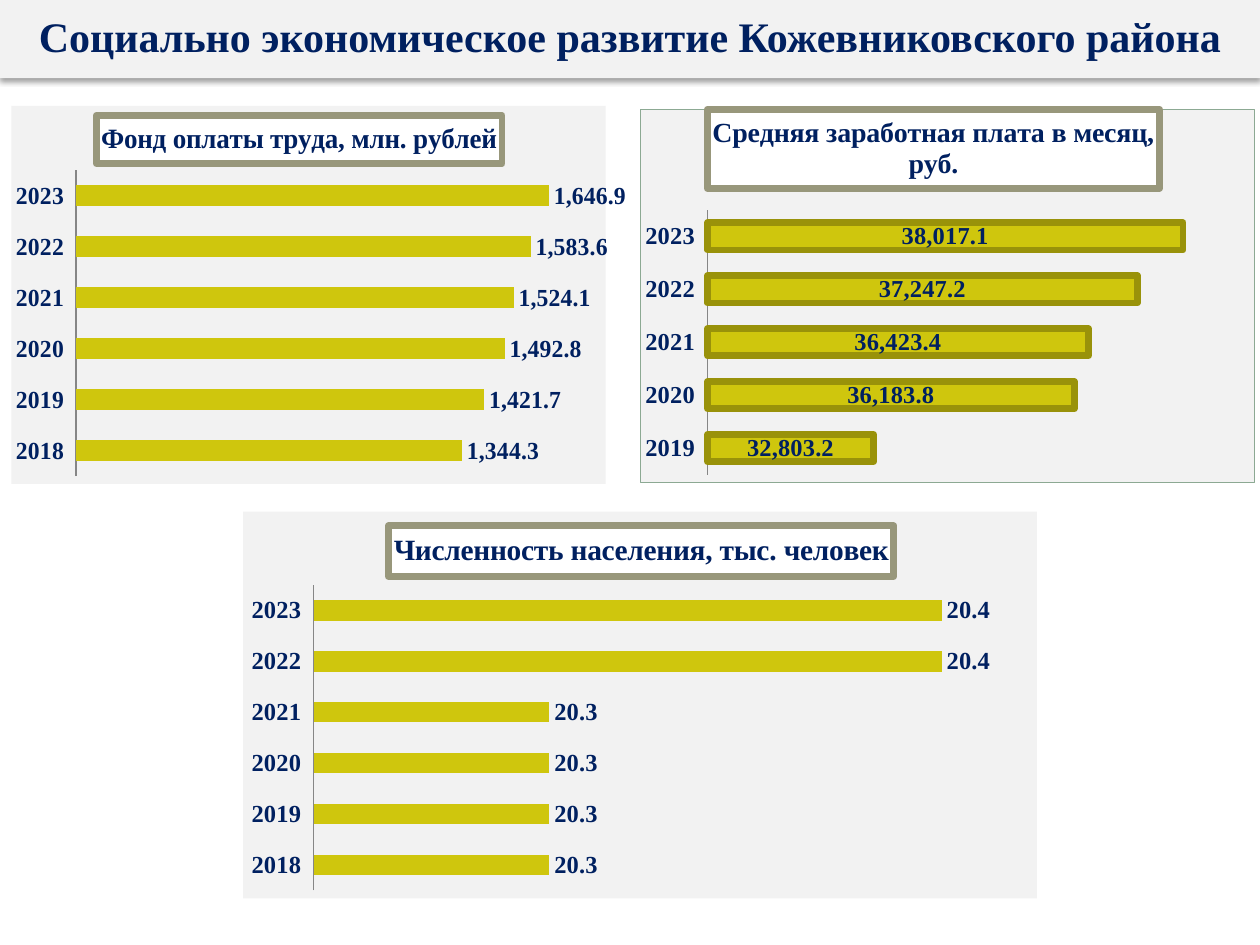
from lxml.etree import SubElement
from pptx import Presentation
from pptx.chart.data import CategoryChartData
from pptx.dml.color import RGBColor
from pptx.enum.chart import XL_CHART_TYPE as ChartType
from pptx.enum.chart import XL_LABEL_POSITION as LabelPos
from pptx.enum.chart import XL_TICK_LABEL_POSITION as TickLabelPos
from pptx.enum.chart import XL_TICK_MARK as TickMark
from pptx.enum.text import MSO_ANCHOR, PP_ALIGN
from pptx.oxml import parse_xml
from pptx.oxml.ns import nsdecls, qn
from pptx.util import Inches, Pt

NAVY, PANEL, OLIVE = "002060", "F2F2F2", "CFC60D"

PANELS = [
    {
        "box": (5.08, 0.84, 4.88, 2.99),
        "heading": "Средняя заработная плата в месяц, руб.",
        "heading_size": 16,
        "heading_at": (0.109, 0),
        "plot_at": (0.109, 0.27, 0.87, 0.71),
        "first_year": 2019,
        "amounts": [32803.2, 36183.8, 36423.4, 37247.2, 38017.1],
        "scale": (30000, 39000),
        "kind": ChartType.BAR_STACKED,
        "label_position": LabelPos.CENTER,
        "gap": 95,
        "border": ("8CA993", 0.5),
        "bar_line": ("99920A", 3.78),
    },
    {
        "box": (1.93, 4.06, 6.3, 3.07),
        "heading": "Численность населения, тыс. человек",
        "heading_size": 16.8,
        "heading_at": (0.183, 0.037),
        "plot_at": (0.089, 0.19, 0.89, 0.79),
        "first_year": 2018,
        "amounts": [20.3, 20.3, 20.3, 20.3, 20.4, 20.4],
        "scale": (20.24, 20.42),
    },
    {
        "box": (0.09, 0.84, 4.88, 3),
        "heading": "Фонд оплаты труда, млн. рублей",
        "heading_size": 16,
        "heading_at": (0.143, 0.025),
        "plot_at": (0.109, 0.17, 0.87, 0.81),
        "first_year": 2018,
        "amounts": [1344.3, 1421.7, 1492.8, 1524.1, 1583.6, 1646.9],
        "scale": (0, 1800),
    },
]


def color(hex_value):
    return RGBColor.from_string(hex_value)


def apply(target, values):
    for name, value in values.items():
        setattr(target, name, value)


def style_font(font, size):
    apply(font, {"name": "Times New Roman", "size": Pt(size), "bold": True})
    font.color.rgb = color(NAVY)


def paint(fill, hex_value):
    fill.solid()
    fill.fore_color.rgb = color(hex_value)


def stroke(line, hex_value, width):
    line.color.rgb = color(hex_value)
    line.width = Pt(width)


def manual_layout(values, inner=False):
    layout = parse_xml(f"<c:layout {nsdecls('c')}><c:manualLayout/></c:layout>")
    entries = [("layoutTarget", "inner")] if inner else []
    entries += [("xMode", "edge"), ("yMode", "edge"), *zip("xywh", values)]
    for name, value in entries:
        SubElement(layout[0], qn(f"c:{name}")).set("val", str(value))
    return layout


def drop_layout(parent):
    for layout in parent.findall(qn("c:layout")):
        parent.remove(layout)


def fill_panel(chart_space, border):
    outline = "<a:ln><a:noFill/></a:ln>"
    if border:
        hex_value, width = border
        outline = (f'<a:ln w="{Pt(width)}"><a:solidFill><a:srgbClr val="{hex_value}"/>'
                   "</a:solidFill></a:ln>")
    chart_space.find(qn("c:chart")).addnext(parse_xml(
        f"<c:spPr {nsdecls('c', 'a')}><a:solidFill><a:srgbClr val=\"{PANEL}\"/>"
        f"</a:solidFill>{outline}</c:spPr>"))


def add_heading(chart, text, size, position):
    chart.has_title = True
    heading = chart.chart_title
    heading.text_frame.text = text
    style_font(heading.text_frame.paragraphs[0].runs[0].font, size)
    paint(heading.format.fill, "FFFFFF")
    stroke(heading.format.line, "98977B", 4)
    title_xml = chart.element.chart.find(qn("c:title"))
    drop_layout(title_xml)
    title_xml.find(qn("c:tx")).addnext(manual_layout(position))


def style_axes(chart, scale):
    years = chart.category_axis
    apply(years, {"major_tick_mark": TickMark.NONE, "minor_tick_mark": TickMark.NONE,
                  "tick_label_position": TickLabelPos.LOW, "has_major_gridlines": False})
    style_font(years.tick_labels.font, 14)
    stroke(years.format.line, "868686", 0.75)
    low, high = scale
    apply(chart.value_axis, {"visible": False, "has_major_gridlines": False,
                             "minimum_scale": low, "maximum_scale": high})


def style_bars(plot, gap, label_position, bar_line):
    apply(plot, {"gap_width": gap, "vary_by_categories": False, "has_data_labels": True})
    apply(plot.data_labels, {"show_value": True, "number_format": "#,##0.0",
                             "number_format_is_linked": False,
                             "position": label_position})
    style_font(plot.data_labels.font, 14)
    bars = plot.series[0]
    paint(bars.format.fill, OLIVE)
    if bar_line:
        stroke(bars.format.line, *bar_line)


def add_bar_panel(slide, panel):
    indicator = CategoryChartData(number_format="#,##0.0")
    first_year, amounts = panel["first_year"], panel["amounts"]
    indicator.categories = [str(first_year + i) for i in range(len(amounts))]
    indicator.add_series("Series 1", amounts)
    chart = slide.shapes.add_chart(panel.get("kind", ChartType.BAR_CLUSTERED),
                                   *map(Inches, panel["box"]), indicator).chart
    chart.has_legend = False
    style_font(chart.font, 14)
    add_heading(chart, panel["heading"], panel["heading_size"], panel["heading_at"])
    style_axes(chart, panel["scale"])
    style_bars(chart.plots[0], panel.get("gap", 150),
               panel.get("label_position", LabelPos.OUTSIDE_END), panel.get("bar_line"))
    plot_area = chart.element.chart.plotArea
    drop_layout(plot_area)
    plot_area.insert(0, manual_layout(panel["plot_at"], inner=True))
    fill_panel(chart.element, panel.get("border"))


def add_title_band(slide, left, top, width, height):
    band = slide.shapes.title
    apply(band, {"left": Inches(left), "top": Inches(top),
                 "width": Inches(width), "height": Inches(height)})
    paint(band.fill, PANEL)
    band._element.spPr.append(parse_xml(
        f"<a:effectLst {nsdecls('a')}><a:outerShdw blurRad=\"{Pt(3.1)}\" dist=\"{Pt(2)}\" "
        'dir="5400000" algn="t" rotWithShape="0"><a:srgbClr val="000000">'
        '<a:alpha val="38000"/></a:srgbClr></a:outerShdw></a:effectLst>'))
    frame = band.text_frame
    frame.text = "Социально экономическое развитие Кожевниковского района"
    apply(frame, {"word_wrap": True, "vertical_anchor": MSO_ANCHOR.MIDDLE,
                  "margin_top": 0, "margin_bottom": Inches(0.06)})
    frame.paragraphs[0].alignment = PP_ALIGN.CENTER
    style_font(frame.paragraphs[0].runs[0].font, 24)


def main():
    deck = Presentation()
    apply(deck, {"slide_width": Inches(10), "slide_height": Inches(7.5)})
    slide = deck.slides.add_slide(deck.slide_layouts[5])
    for panel in PANELS:
        add_bar_panel(slide, panel)
    add_title_band(slide, 0, 0, 10, 0.62)
    deck.save("out.pptx")


if __name__ == "__main__":
    main()
